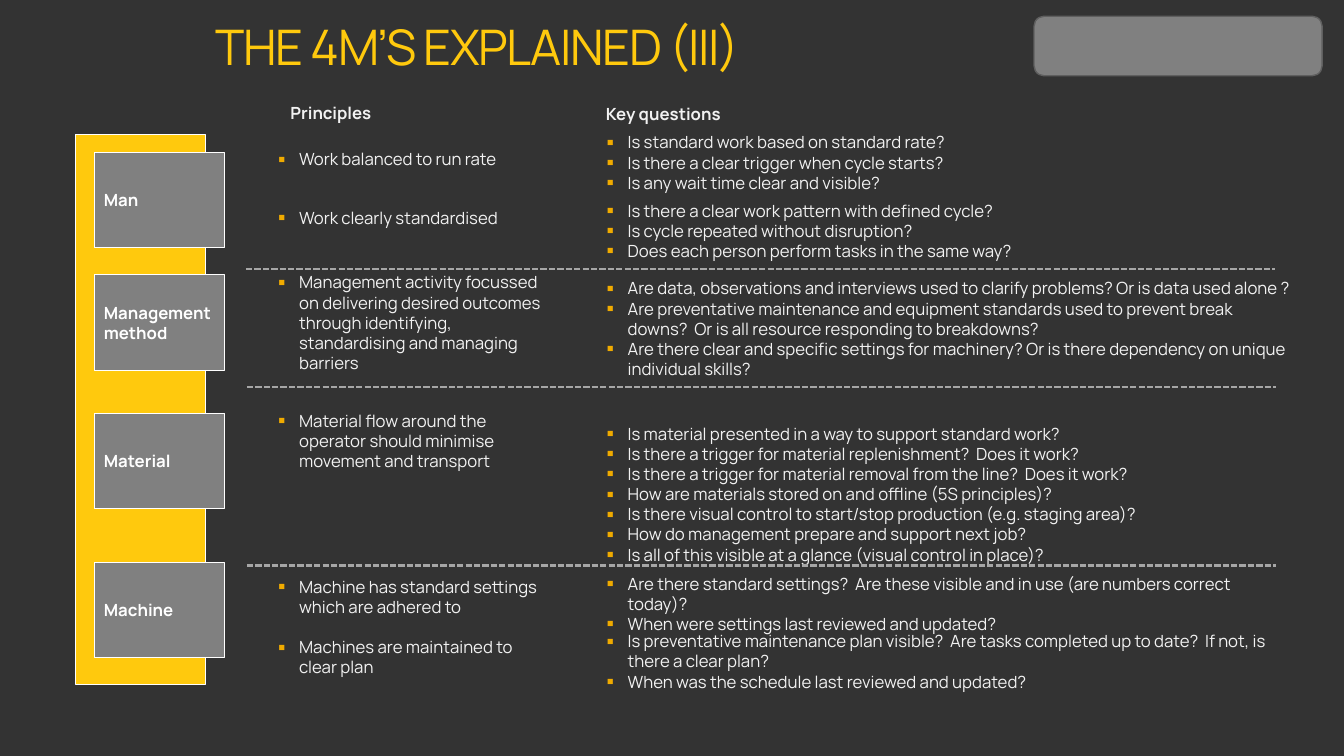
from pptx import Presentation
from pptx.dml.color import RGBColor
from pptx.enum.dml import MSO_LINE
from pptx.enum.shapes import MSO_CONNECTOR, MSO_SHAPE
from pptx.enum.text import MSO_ANCHOR, MSO_AUTO_SIZE, PP_ALIGN
from pptx.oxml.ns import qn
from pptx.util import Cm, Pt
from lxml import etree

BACKGROUND = RGBColor(0x33, 0x33, 0x33)
YELLOW = RGBColor(0xFF, 0xC9, 0x0D)
BULLET_ORANGE = RGBColor(0xF0, 0xAB, 0x00)
GREY = RGBColor(0x80, 0x80, 0x80)
DARK_GREY = RGBColor(0x5F, 0x5F, 0x5F)
RULE_GREY = RGBColor(0xA6, 0xA6, 0xA6)
OFF_WHITE = RGBColor(0xF2, 0xF2, 0xF2)
WHITE = RGBColor(0xFF, 0xFF, 0xFF)

RECTANGLE = MSO_SHAPE.RECTANGLE
ROUNDED = MSO_SHAPE.ROUNDED_RECTANGLE
STRAIGHT = MSO_CONNECTOR.STRAIGHT
SQUARE_DOT = MSO_LINE.SQUARE_DOT
TOP, MIDDLE, BOTTOM = MSO_ANCHOR.TOP, MSO_ANCHOR.MIDDLE, MSO_ANCHOR.BOTTOM
LEFT = PP_ALIGN.LEFT
GROW = MSO_AUTO_SIZE.SHAPE_TO_FIT_TEXT

FONT = "Manrope"
LINE_HEIGHT = 0.51
PRINCIPLE_LEFT, PRINCIPLE_WIDTH = 6.99, 6.68
QUESTION_LEFT, QUESTION_WIDTH = 15.27, 17.32

LABELS = [("Man", 3.84), ("Management method", 6.93),
          ("Material", 10.41), ("Machine", 14.17)]

# Each entry: top in cm, number of lines, bullet texts
PRINCIPLES = [
    (3.76, 1, ["Work balanced to run rate"]),
    (5.23, 1, ["Work clearly standardised"]),
    (6.86, 5, ["Management activity focussed on delivering desired outcomes "
               "through identifying, standardising and managing barriers"]),
    (10.34, 3, ["Material flow around the operator should minimise movement "
                "and transport"]),
    (14.53, 2, ["Machine has standard settings which are adhered to"]),
    (16.05, 2, ["Machines are maintained to clear plan"]),
]
QUESTIONS = [
    (3.33, 3, ["Is standard work based on standard rate?",
               "Is there a clear trigger when cycle starts?",
               "Is any wait time clear and visible?"]),
    (5.05, 3, ["Is there a clear work pattern with defined cycle?",
               "Is cycle repeated without disruption?",
               "Does each person perform tasks in the same way?"]),
    (7.01, 5, ["Are data, observations and interviews used to clarify problems? "
               "Or is data used alone ?",
               "Are preventative maintenance and equipment standards used to "
               "prevent break downs?  Or is all resource responding to breakdowns?",
               "Are there clear and specific settings for machinery? Or is there "
               "dependency on unique individual skills?"]),
    (10.67, 7, ["Is material presented in a way to support standard work?",
                "Is there a trigger for material replenishment?  Does it work?",
                "Is there a trigger for material removal from the line?  Does it work?",
                "How are materials stored on and offline (5S principles)?",
                "Is there visual control to start/stop production (e.g. staging area)?",
                "How do management prepare and support next job?",
                "Is all of this visible at a glance (visual control in place)?"]),
    (14.45, 3, ["Are there standard settings?  Are these visible and in use "
                "(are numbers correct today)?",
                "When were settings last reviewed and updated?"]),
    (15.9, 3, ["Is preventative maintenance plan visible?  Are tasks completed "
               "up to date?  If not, is there a clear plan?",
               "When was the schedule last reviewed and updated?"]),
]


class SlideBuilder:
    def __init__(self, slide):
        self.slide = slide

    def set_text(self, shape, texts, size=12, color=OFF_WHITE, bold=False,
                 anchor=TOP, margins=(0, 0, 0, 0), bullets=False):
        """Fill a shape with paragraphs; margins are left, top, right, bottom."""
        frame = shape.text_frame
        frame.word_wrap = True
        frame.vertical_anchor = anchor
        (frame.margin_left, frame.margin_top,
         frame.margin_right, frame.margin_bottom) = map(Cm, margins)
        for index, text in enumerate(texts):
            paragraph = frame.add_paragraph() if index else frame.paragraphs[0]
            paragraph.text = text
            paragraph.alignment = LEFT
            if bullets:
                self.add_bullet(paragraph)
            font = paragraph.font
            font.name, font.size, font.bold = FONT, Pt(size), bold
            font.color.rgb = color
        return frame

    def add_bullet(self, paragraph):
        paragraph.level = 1
        properties = paragraph._p.get_or_add_pPr()
        properties.set("marL", str(Cm(0.55)))
        properties.set("indent", str(-Cm(0.53)))
        color = etree.SubElement(properties, qn("a:buClr"))
        etree.SubElement(color, qn("a:srgbClr"), val=str(BULLET_ORANGE))
        etree.SubElement(properties, qn("a:buSzPct"), val="125000")
        etree.SubElement(properties, qn("a:buFont"), typeface="Arial")
        etree.SubElement(properties, qn("a:buChar"), char="▪")

    def text_box(self, left, top, width, height):
        return self.slide.shapes.add_textbox(
            Cm(left), Cm(top), Cm(width), Cm(height))

    def title(self, text):
        box = self.text_box(5.18, 0.46, 21.46, 1.04)
        frame = self.set_text(box, [text], size=35, color=YELLOW,
                              margins=(0.25, 0.13, 0.25, 0.13))
        paragraph = frame.paragraphs[0]
        paragraph.line_spacing = 0.9
        paragraph.runs[0]._r.get_or_add_rPr().set("spc", "-100")

    def heading(self, text, left, top, width):
        box = self.text_box(left, top, width, 0.56)
        frame = self.set_text(box, [text], bold=True, anchor=BOTTOM,
                              margins=(0, 0, 0, 0.05))
        frame.auto_size = GROW

    def bullet_list(self, left, top, width, lines, texts):
        box = self.text_box(left, top, width, lines * LINE_HEIGHT)
        self.set_text(box, texts, bullets=True).auto_size = GROW

    def panel(self, left, top, width, height, fill, line=WHITE,
              line_width=0.75, kind=RECTANGLE):
        shape = self.slide.shapes.add_shape(
            kind, Cm(left), Cm(top), Cm(width), Cm(height))
        shape.shadow.inherit = False
        shape.fill.solid()
        shape.fill.fore_color.rgb = fill
        shape.line.color.rgb = line
        shape.line.width = Pt(line_width)
        return shape

    def label(self, text, top):
        shape = self.panel(2.39, top, 3.28, 2.4, GREY)
        self.set_text(shape, [text], color=WHITE, bold=True, anchor=MIDDLE,
                      margins=(0.23, 0.23, 0.23, 0.23))

    def dotted_rule(self, left, top, width):
        line = self.slide.shapes.add_connector(
            STRAIGHT, Cm(left), Cm(top), Cm(left + width), Cm(top))
        line.line.color.rgb = RULE_GREY
        line.line.width = Pt(1.5)
        line.line.dash_style = SQUARE_DOT
        etree.SubElement(line._element.spPr, qn("a:effectLst"))


def main():
    presentation = Presentation()
    presentation.slide_width, presentation.slide_height = Cm(33.87), Cm(19.05)
    slide = presentation.slides.add_slide(presentation.slide_layouts[6])
    slide.background.fill.solid()
    slide.background.fill.fore_color.rgb = BACKGROUND

    builder = SlideBuilder(slide)
    builder.title("THE 4M’S EXPLAINED (III)")
    builder.panel(1.91, 3.4, 3.28, 13.84, YELLOW)
    for text, top in LABELS:
        builder.label(text, top)
    builder.heading("Principles", 7.32, 2.59, PRINCIPLE_WIDTH)
    builder.heading("Key questions", QUESTION_LEFT, 2.62, 15.44)
    for left, width, blocks in ((PRINCIPLE_LEFT, PRINCIPLE_WIDTH, PRINCIPLES),
                                (QUESTION_LEFT, QUESTION_WIDTH, QUESTIONS)):
        for top, lines, texts in blocks:
            builder.bullet_list(left, top, width, lines, texts)
    for left, top in ((6.2, 6.78), (6.22, 9.75), (6.22, 14.25)):
        builder.dotted_rule(left, top, 25.93)
    builder.panel(26.06, 0.41, 7.26, 1.5, GREY, DARK_GREY, 1, ROUNDED)
    presentation.save("out.pptx")


if __name__ == "__main__":
    main()
